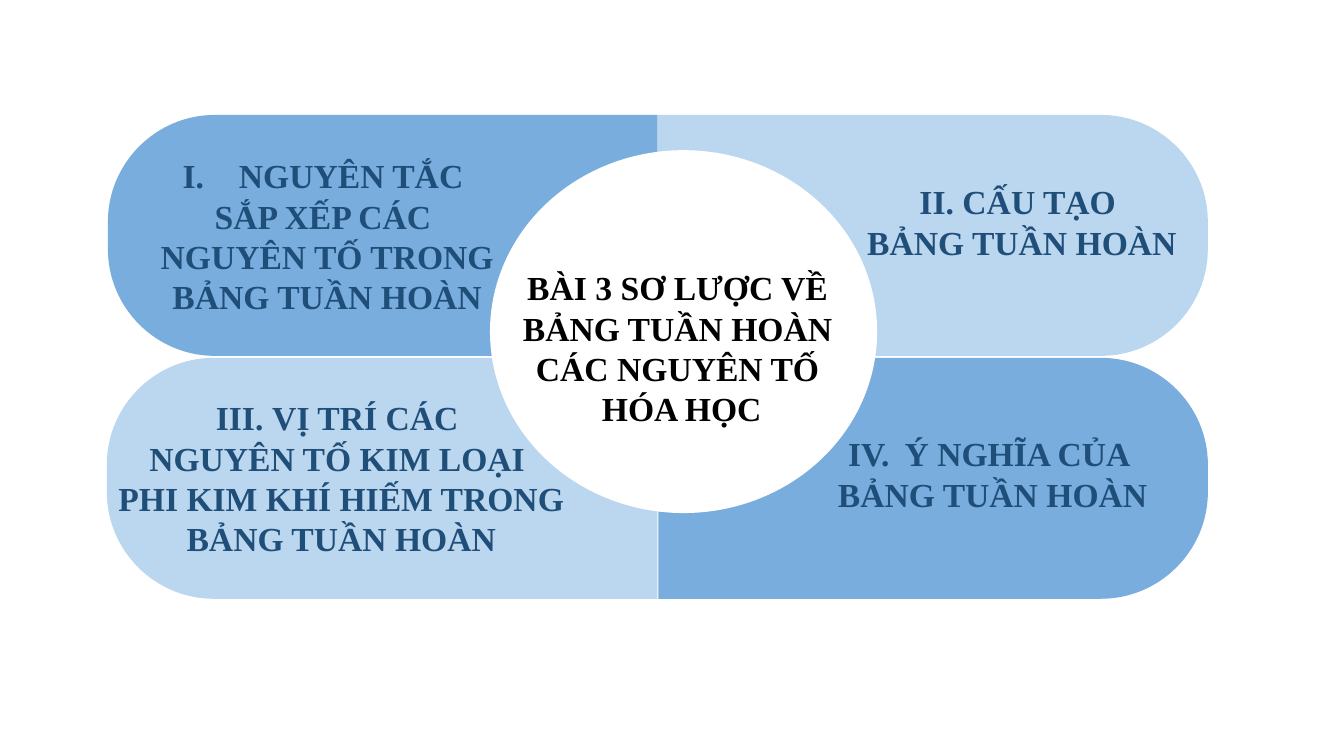
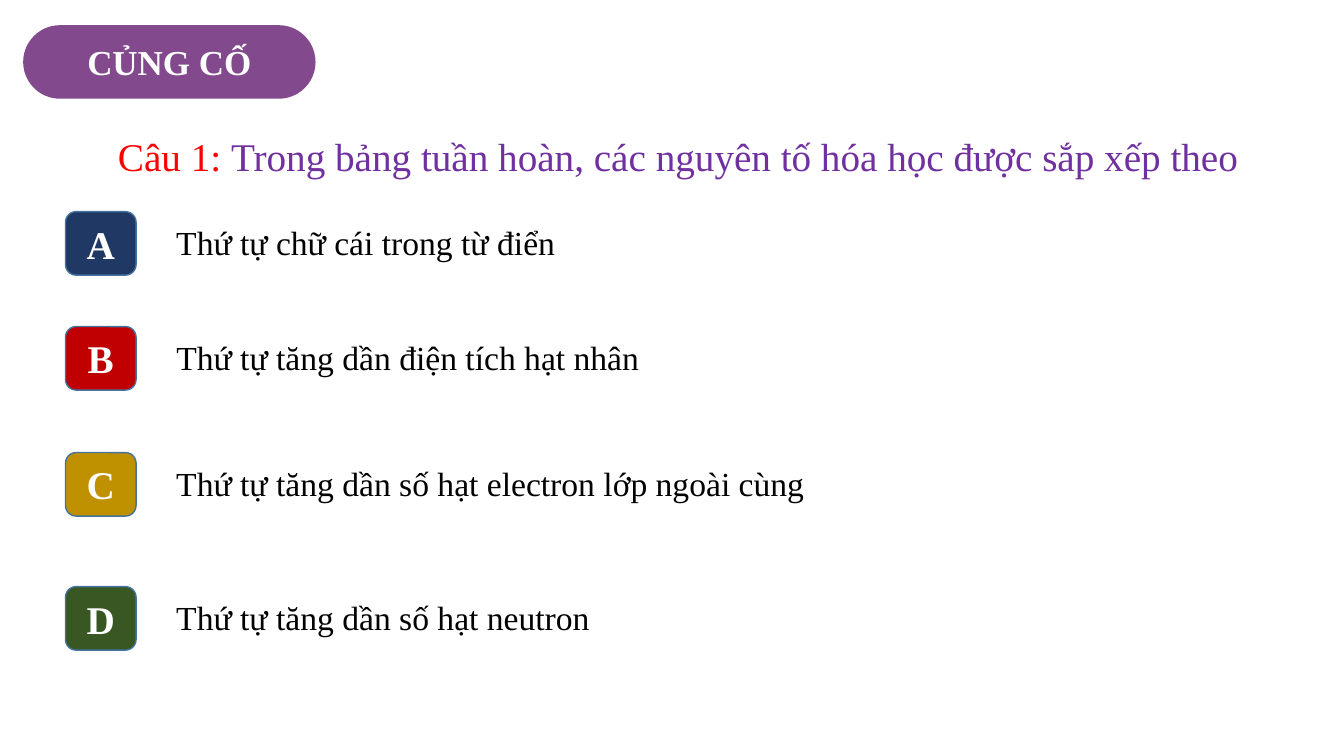
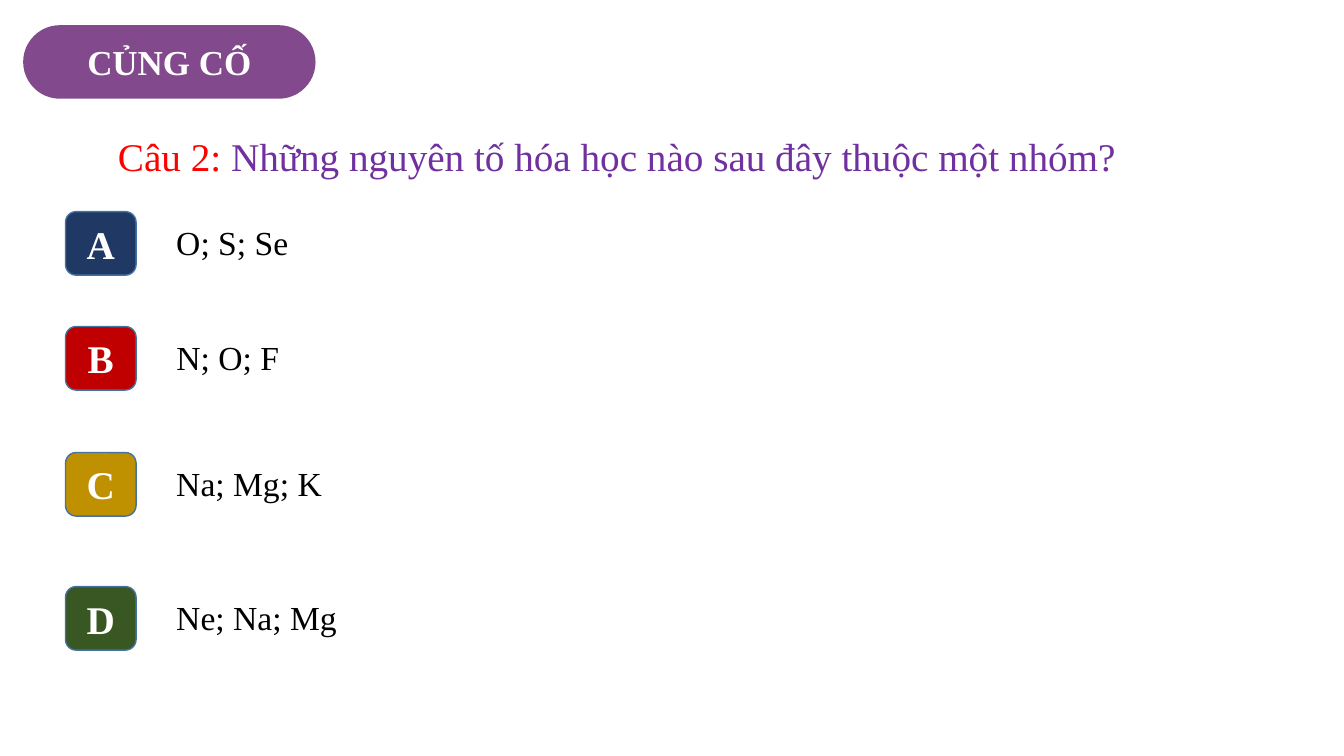
"""Build a lesson overview of the periodic table and two quiz slides."""
from dataclasses import dataclass

from lxml.etree import SubElement
from pptx import Presentation
from pptx.dml.color import RGBColor
from pptx.enum.shapes import MSO_SHAPE as Shape
from pptx.enum.text import MSO_ANCHOR as Anchor, MSO_AUTO_SIZE as AutoSize, PP_ALIGN as Align
from pptx.oxml.ns import qn
from pptx.util import Inches, Pt


@dataclass(frozen=True)
class Theme:
    font: str = "Times New Roman"
    dark_panel: str = "79ADDD"
    light_panel: str = "BBD6EF"
    heading: str = "1F4E79"
    badge: str = "82498C"
    question_label: str = "FF0000"
    question: str = "7030A0"
    tile_line: str = "43739E"
    black: str = "000000"
    white: str = "FFFFFF"
    body_size: int = 24
    badge_size: int = 25
    question_size: int = 28


THEME = Theme()

LESSON = ["BÀI 3 SƠ LƯỢC VỀ BẢNG TUẦN HOÀN CÁC NGUYÊN TỐ", " HÓA HỌC"]
SECTIONS = [
    (1, (1.03, 1.49, 4.43, 1.72),
     ["NGUYÊN TẮC ", "SẮP XẾP CÁC ", "NGUYÊN TỐ TRONG BẢNG TUẦN HOÀN"]),
    (None, (8.39, 1.75, 3.49, 0.91), ["II. CẤU TẠO ", "BẢNG TUẦN HOÀN"]),
    (3, (0.97, 3.89, 4.83, 1.72),
     ["VỊ TRÍ CÁC ", "NGUYÊN TỐ KIM LOẠI ", "PHI KIM KHÍ HIẾM TRONG BẢNG TUẦN HOÀN"]),
    (4, (7.63, 4.25, 4.43, 0.91), ["Ý NGHĨA CỦA ", "BẢNG TUẦN HOÀN"]),
]
BADGE = "CỦNG CỐ"
QUESTIONS = [
    ("Câu 1: ", "Trong bảng tuần hoàn, các nguyên tố hóa học được sắp xếp theo",
     [("Thứ tự chữ cái trong từ điển", 4.03),
      ("Thứ tự tăng dần điện tích hạt nhân", 5.62),
      ("Thứ tự tăng dần số hạt electron lớp ngoài cùng", 6.56),
      ("Thứ tự tăng dần số hạt neutron", 5.84)]),
    ("Câu 2: ", "Những nguyên tố hóa học nào sau đây thuộc một nhóm?",
     [("O; S; Se", 4.03), ("N; O; F", 1.65), ("Na; Mg; K", 1.84), ("Ne; Na; Mg", 1.84)]),
]
CHOICES = [("A", 2.1, "203864"), ("B", 3.24, "C00000"),
           ("C", 4.49, "BF9000"), ("D", 5.82, "385723")]

PANELS = [
    (6.52, 11.98, 1.14, THEME.light_panel),
    (6.52, 1.07, 1.14, THEME.dark_panel),
    (6.52, 1.06, 3.55, THEME.light_panel),
    (6.53, 11.98, 3.55, THEME.dark_panel),
]
PANEL_HEIGHT, PANEL_RADIUS = 2.39, 1.06
ARC_HANDLE = 0.55


def color(value):
    return RGBColor.from_string(value)


def style(paragraph, size, value, bold=False, align=Align.CENTER):
    paragraph.alignment = align
    font = paragraph.font
    font.name, font.size, font.bold = THEME.font, Pt(size), bold
    font.color.rgb = color(value)


def paint(shape, fill, line=None):
    shape.shadow.inherit = False
    shape.fill.solid()
    shape.fill.fore_color.rgb = color(fill)
    if line:
        shape.line.color.rgb = color(line)
        shape.line.width = Pt(1)
    else:
        shape.line.fill.background()


def add_shape(slide, kind, box, fill, line=None):
    shape = slide.shapes.add_shape(kind, *map(Inches, box))
    paint(shape, fill, line)
    return shape


def add_label(shape, text, size):
    frame = shape.text_frame
    frame.vertical_anchor = Anchor.MIDDLE
    frame.text = text
    style(frame.paragraphs[0], size, THEME.white, bold=True)


def add_text(slide, box):
    frame = slide.shapes.add_textbox(*map(Inches, box)).text_frame
    frame.word_wrap = True
    return frame


def place_title(slide, box):
    title = slide.shapes.title
    title.left, title.top, title.width, title.height = map(Inches, box)
    frame = title.text_frame
    frame.word_wrap = True
    frame.auto_size = AutoSize.NONE
    frame.vertical_anchor = Anchor.TOP
    return frame


def number_paragraph(paragraph, start):
    properties = paragraph._p.get_or_add_pPr()
    properties.set("marL", str(Inches(0.56)))
    properties.set("indent", str(-Inches(0.56)))
    SubElement(properties, qn("a:buAutoNum"), type="romanUcPeriod", startAt=str(start))


def write_lines(frame, lines, value, start=None):
    frame.text = "\n".join(lines)
    if start:
        number_paragraph(frame.paragraphs[0], start)
    for paragraph in frame.paragraphs:
        style(paragraph, THEME.body_size, value, bold=True)


def round_corners(shape, corner_starts):
    segments = list(shape.element.iter(qn("a:lnTo")))
    for start in corner_starts:
        first, *others = segments[start:start + 3]
        curve = first.getparent().makeelement(qn("a:cubicBezTo"))
        first.addprevious(curve)
        for segment in (first, *others):
            curve.append(segment[0])
            segment.getparent().remove(segment)


def add_panel(slide, inner, outer, top, fill):
    side = 1 if outer > inner else -1
    bottom = top + PANEL_HEIGHT
    arc_x = outer - side * PANEL_RADIUS
    handle = ARC_HANDLE * PANEL_RADIUS
    handle_x = arc_x + side * handle
    upper, lower = top + PANEL_RADIUS, bottom - PANEL_RADIUS
    points = [
        (inner, top), (arc_x, top),
        (handle_x, top), (outer, upper - handle), (outer, upper),
        (outer, lower),
        (outer, lower + handle), (handle_x, bottom), (arc_x, bottom),
        (inner, bottom),
    ]
    outline = [(Inches(x), Inches(y)) for x, y in points]
    builder = slide.shapes.build_freeform(*outline[0])
    builder.add_line_segments(outline[1:], close=True)
    panel = builder.convert_to_shape()
    round_corners(panel, (1, 5))
    paint(panel, fill)


def build_overview(slide):
    for panel in PANELS:
        add_panel(slide, *panel)
    add_shape(slide, Shape.OVAL, (4.86, 1.49, 3.84, 3.6), THEME.white)
    write_lines(place_title(slide, (4.8, 2.6, 3.84, 1.72)), LESSON, THEME.black)
    title = slide.shapes.title.element
    title.getparent().append(title)
    for start, box, lines in SECTIONS:
        write_lines(add_text(slide, box), lines, THEME.heading, start)


def build_question(slide, label, question, answers):
    badge = add_shape(slide, Shape.ROUNDED_RECTANGLE, (0.23, 0.25, 2.9, 0.73), THEME.badge)
    badge.adjustments[0] = 0.5
    add_label(badge, BADGE, THEME.badge_size)

    paragraph = place_title(slide, (1.07, 1.26, 11.66, 0.57)).paragraphs[0]
    style(paragraph, THEME.question_size, THEME.question, align=Align.LEFT)
    for text, value in ((label, THEME.question_label), (question, THEME.question)):
        run = paragraph.add_run()
        run.text = text
        run.font.color.rgb = color(value)

    for (letter, top, fill), (answer, width) in zip(CHOICES, answers):
        tile = add_shape(slide, Shape.ROUNDED_RECTANGLE, (0.65, top, 0.7, 0.63),
                         fill, THEME.tile_line)
        add_label(tile, letter, THEME.question_size)
        frame = add_text(slide, (1.65, top + 0.05, width, 0.5))
        frame.text = answer
        style(frame.paragraphs[0], THEME.body_size, THEME.black, align=Align.LEFT)


def main():
    presentation = Presentation()
    presentation.slide_width, presentation.slide_height = Inches(13.33), Inches(7.5)
    title_only = presentation.slide_layouts[5]
    build_overview(presentation.slides.add_slide(title_only))
    for question in QUESTIONS:
        build_question(presentation.slides.add_slide(title_only), *question)
    presentation.save("out.pptx")


if __name__ == "__main__":
    main()
